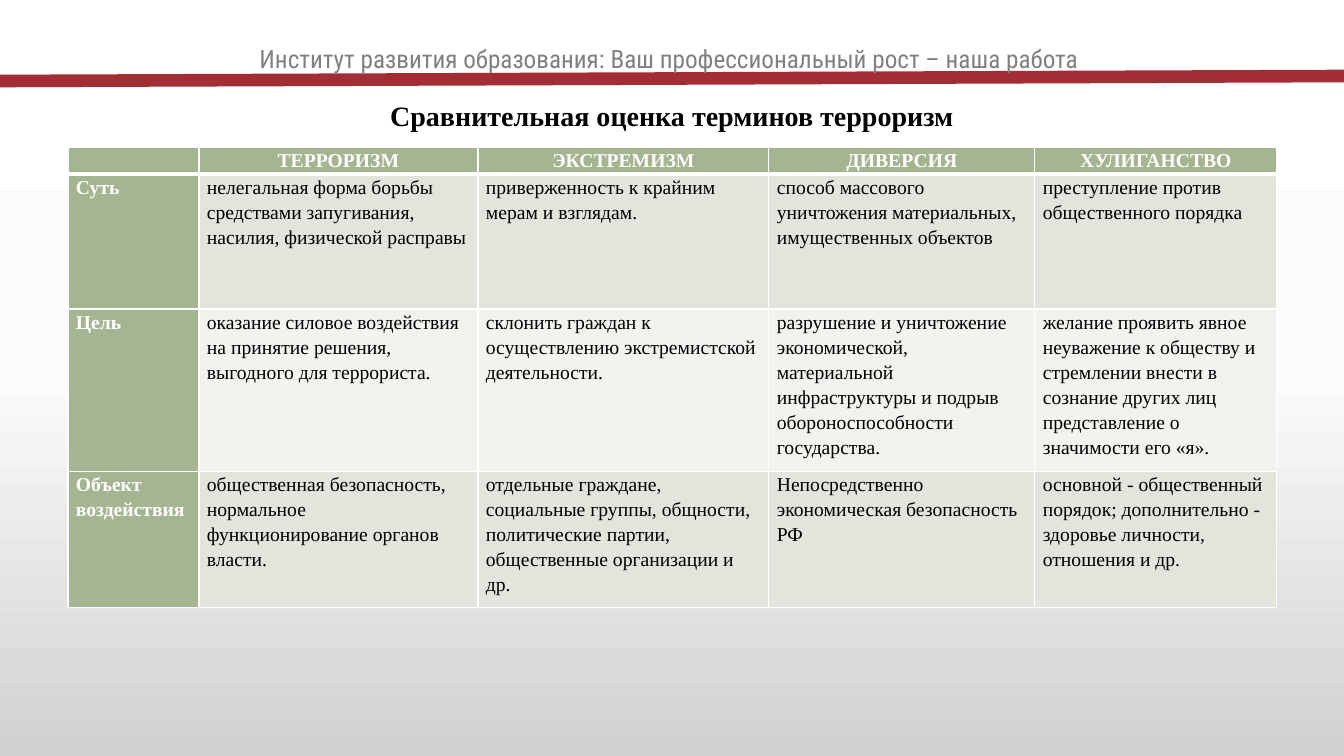
import copy

import pptx
import pptx.dml.color
import pptx.enum.shapes
import pptx.enum.text
import pptx.oxml.ns
import pptx.util
from lxml import etree

EMU_PER_PX = 914400 / 100.8
ALIGN = pptx.enum.text.PP_ALIGN
ANCHOR = pptx.enum.text.MSO_ANCHOR
COLORS = {
    "white": "FFFFFF", "black": "000000", "gray": "808080", "red": "A32D35",
    "green": "A5B592", "band_dark": "E1E5DC", "band_light": "F0F3EE",
    "sky_middle": "FBFBFB", "sky_bottom": "D1D1D1",
}
HEADERS = ["", "ТЕРРОРИЗМ", "ЭКСТРЕМИЗМ", "ДИВЕРСИЯ", "ХУЛИГАНСТВО"]
ROWS = [
    ["Суть",
     "нелегальная форма борьбы средствами запугивания, насилия, физической расправы",
     "приверженность к крайним мерам и взглядам.",
     "способ массового уничтожения материальных, имущественных объектов",
     "преступление против общественного порядка"],
    ["Цель",
     "оказание силовое воздействия на принятие решения, выгодного для террориста.",
     "склонить граждан к осуществлению экстремистской деятельности.",
     "разрушение и уничтожение экономической, материальной инфраструктуры "
     "и подрыв обороноспособности государства.",
     "желание проявить явное неуважение к обществу и стремлении внести в сознание "
     "других лиц представление о значимости его «я»."],
    ["Объект воздействия",
     "общественная безопасность, нормальное функционирование органов власти.",
     "отдельные граждане, социальные группы, общности, политические партии, "
     "общественные организации и др.",
     "Непосредственно экономическая безопасность РФ",
     "основной - общественный порядок; дополнительно - здоровье личности, "
     "отношения и др."],
]
COLUMN_WIDTHS = [131, 279, 291, 266, 242]
ROW_HEIGHTS = [26, 135, 162, 136]


def px(length):
    return pptx.util.Emu(round(length * EMU_PER_PX))


def color(name):
    return pptx.dml.color.RGBColor.from_string(COLORS[name])


def apply(target, values):
    for name, value in values.items():
        setattr(target, name, value)


class SlideBuilder:
    """Holds the text style and the slide being filled."""

    serif = "Times New Roman"
    sans = "Roboto Condensed"

    def __init__(self, deck):
        self.page = deck.slides.add_slide(deck.slide_layouts[5])

    def background(self, stops):
        fill = self.page.background.fill
        fill.gradient()
        fill.gradient_angle = 270
        stop_list = next(self.page.element.iter(pptx.oxml.ns.qn("a:gsLst")))
        while len(stop_list) < len(stops):
            stop_list.append(copy.deepcopy(stop_list[-1]))
        for stop, (position, name) in zip(fill.gradient_stops, stops):
            stop.position = position
            stop.color.rgb = color(name)

    def line(self, start, end, name, width):
        line = self.page.shapes.add_connector(
            pptx.enum.shapes.MSO_CONNECTOR.STRAIGHT, *map(px, start + end))
        line.line.color.rgb = color(name)
        line.line.width = pptx.util.Pt(width)
        etree.SubElement(line.element.spPr, pptx.oxml.ns.qn("a:effectLst"))

    def set_text(self, frame, text, size, font, name, bold=False, align=ALIGN.LEFT, spacing=1.0):
        para = frame.paragraphs[0]
        apply(para, {"alignment": align, "line_spacing": spacing})
        if not text:
            para._p.get_or_add_endParaRPr().set("sz", str(size * 100))
            return
        span = para.add_run()
        span.text = text
        apply(span.font, {"size": pptx.util.Pt(size), "name": font, "bold": bold})
        span.font.color.rgb = color(name)

    def text(self, text, place, size, font, name):
        box = self.page.shapes.add_textbox(*map(px, place))
        box.text_frame.word_wrap = True
        self.set_text(box.text_frame, text, size, font, name, align=ALIGN.CENTER)

    def title(self, text, place, size):
        title = self.page.shapes.title
        apply(title, dict(zip(("left", "top", "width", "height"), map(px, place))))
        apply(title.text_frame, {
            "word_wrap": False, "vertical_anchor": ANCHOR.MIDDLE,
            "auto_size": pptx.enum.text.MSO_AUTO_SIZE.NONE})
        self.set_text(title.text_frame, text, size, self.serif, "black", True, ALIGN.CENTER)

    def borders(self, cell, widths):
        """Put white borders before the cell's fill; widths are in points."""
        properties = cell._tc.get_or_add_tcPr()
        for index, (side, width) in enumerate(widths.items()):
            border = etree.Element(pptx.oxml.ns.qn(f"a:ln{side}"), w=str(pptx.util.Pt(width)))
            fill = etree.SubElement(border, pptx.oxml.ns.qn("a:solidFill"))
            etree.SubElement(fill, pptx.oxml.ns.qn("a:srgbClr"), val=COLORS["white"])
            properties.insert(index, border)

    def table(self, rows, left, top, widths, heights):
        place = map(px, (left, top, sum(widths), sum(heights)))
        table = self.page.shapes.add_table(len(rows), len(widths), *place).table
        for column, width in zip(table.columns, widths):
            column.width = px(width)
        for row, height in zip(table.rows, heights):
            row.height = px(height)
        for r, row in enumerate(rows):
            for c, text in enumerate(row):
                self.cell(table.cell(r, c), text, r, c)

    def cell(self, cell, text, row, column):
        heading = row == 0 or column == 0
        apply(cell, {"margin_left": px(8), "margin_right": px(8),
                     "margin_top": 0, "margin_bottom": 0})
        cell.fill.solid()
        band = "band_dark" if row % 2 else "band_light"
        cell.fill.fore_color.rgb = color("green" if heading else band)
        self.borders(cell, {"L": 1, "R": 1, "T": 3 if row == 1 else 1, "B": 3 if row == 0 else 1})
        self.set_text(cell.text_frame, text, 14, self.serif, "white" if heading else "black",
                      heading, ALIGN.CENTER if row == 0 else ALIGN.LEFT, 1.15)


def main():
    deck = pptx.Presentation()
    apply(deck, {"slide_width": px(1344), "slide_height": px(756)})
    slide = SlideBuilder(deck)
    slide.background([(0, "white"), (0.5, "sky_middle"), (1, "sky_bottom")])
    slide.line((0, 81), (1344, 76), "red", 9)
    slide.text("Институт развития образования: Ваш профессиональный рост – наша работа",
               (37, 38, 1264, 40), 18, slide.sans, "gray")
    slide.table([HEADERS] + ROWS, 68, 147, COLUMN_WIDTHS, ROW_HEIGHTS)
    slide.title("Сравнительная оценка терминов терроризм", (378, 93, 588, 44), 20)
    deck.save("out.pptx")


if __name__ == "__main__":
    main()
